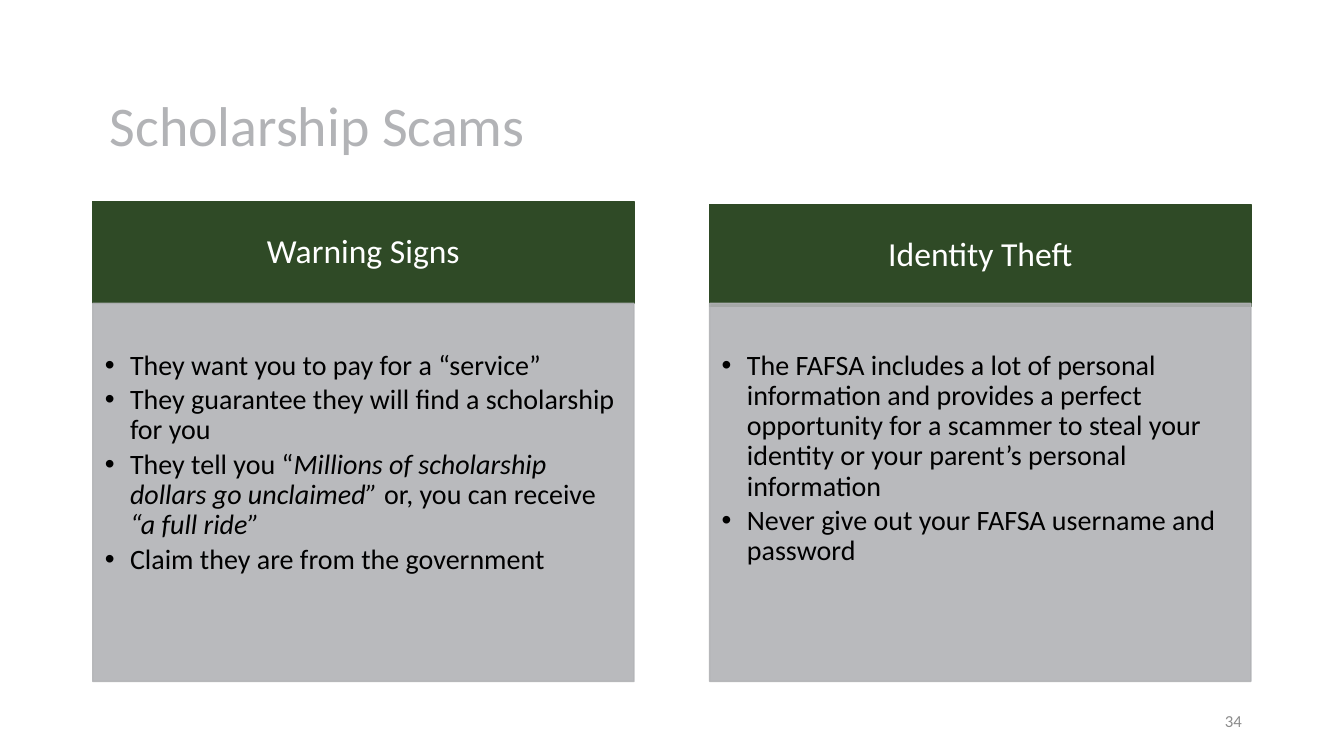
from pptx import Presentation
from pptx.dml.color import RGBColor
from pptx.enum.shapes import MSO_SHAPE
from pptx.enum.text import MSO_ANCHOR, PP_ALIGN
from pptx.oxml.ns import qn
from pptx.util import Pt
from lxml.etree import SubElement

TITLE = "Scholarship Scams"
PAGE_NUMBER = "34"
PANELS = [
    {
        "heading": "Warning Signs",
        "heading_top": 144,
        "points": [
            [("They want you to pay for a “service”", False)],
            [("They guarantee they will find a scholarship for you", False)],
            [
                ("They tell you “", False),
                ("Millions of scholarship dollars go unclaimed” ", True),
                ("or, you can receive ", False),
                ("“a full ride”", True),
            ],
            [("Claim they are from the government", False)],
        ],
    },
    {
        "heading": "Identity Theft",
        "heading_top": 146.16,
        "points": [
            [("The FAFSA includes a lot of personal information and provides "
              "a perfect opportunity for a scammer to steal your identity "
              "or your parent’s personal information", False)],
            [("Never give out your FAFSA username and password", False)],
        ],
    },
]
COLORS = {
    "green": "2F4A26",
    "gray": "B2B3B6",
    "page": "8C8C8C",
    "white": "FFFFFF",
    "black": "000000",
}
FONT = "Calibri"
PANEL_LEFT, PANEL_STEP, PANEL_WIDTH = 66.24, 440.64, 386.64
HEADING_HEIGHT = 72.72
BODY_TOP, BODY_HEIGHT = 216.72, 270
BULLET_INDENT = 18


def rgb(color):
    return RGBColor.from_string(COLORS[color])


def write_text(holder, paragraphs, *, size, color, align=PP_ALIGN.LEFT,
               anchor=MSO_ANCHOR.TOP, insets=(7.2, 3.6, 7.2, 3.6),
               line_spacing=0.9, space_after=0, bullets=False):
    frame = holder.text_frame
    frame.word_wrap = True
    frame.vertical_anchor = anchor
    (frame.margin_left, frame.margin_top,
     frame.margin_right, frame.margin_bottom) = map(Pt, insets)
    for index, runs in enumerate(paragraphs):
        paragraph = frame.add_paragraph() if index else frame.paragraphs[0]
        paragraph.alignment = align
        paragraph.line_spacing = line_spacing
        paragraph.space_after = Pt(space_after)
        if bullets:
            properties = paragraph._p.get_or_add_pPr()
            properties.set("marL", str(Pt(BULLET_INDENT)))
            properties.set("indent", str(-Pt(BULLET_INDENT)))
            SubElement(properties, qn("a:buFont"), typeface="Arial")
            SubElement(properties, qn("a:buChar"), char="•")
        for words, italic in runs:
            run = paragraph.add_run()
            run.text = words
            run.font.name = FONT
            run.font.size = Pt(size)
            run.font.italic = italic
            run.font.color.rgb = rgb(color)


def add_block(slide, left, top, height, color, opacity=100):
    block = slide.shapes.add_shape(
        MSO_SHAPE.RECTANGLE, Pt(left), Pt(top), Pt(PANEL_WIDTH), Pt(height))
    block.shadow.inherit = False
    block.fill.solid()
    block.fill.fore_color.rgb = rgb(color)
    block.line.color.rgb = rgb(color)
    block.line.width = Pt(1)
    if opacity < 100:
        for paint in block._element.spPr.iter(qn("a:srgbClr")):
            SubElement(paint, qn("a:alpha"), val=str(opacity * 1000))
    return block


def add_panel(slide, left, panel):
    heading = add_block(
        slide, left, panel["heading_top"], HEADING_HEIGHT, "green")
    write_text(heading, [[(panel["heading"], False)]], size=24, color="white",
               align=PP_ALIGN.CENTER, anchor=MSO_ANCHOR.MIDDLE,
               insets=(13.68, 7.92, 13.68, 7.92))
    body = add_block(slide, left, BODY_TOP, BODY_HEIGHT, "gray", opacity=90)
    write_text(body, panel["points"], size=20, color="black",
               insets=(8.64, 34, 11.52, 12.24), space_after=3, bullets=True)


def main():
    deck = Presentation()
    deck.slide_width, deck.slide_height = Pt(960), Pt(540)
    slide = deck.slides.add_slide(deck.slide_layouts[6])

    title = slide.shapes.add_textbox(Pt(71.28), Pt(54.72), Pt(786.24), Pt(61.92))
    write_text(title, [[(TITLE, False)]], size=40, color="gray",
               anchor=MSO_ANCHOR.BOTTOM)

    for column, panel in enumerate(PANELS):
        add_panel(slide, PANEL_LEFT + column * PANEL_STEP, panel)

    page = slide.shapes.add_textbox(Pt(678.24), Pt(500.4), Pt(216), Pt(28.8))
    write_text(page, [[(PAGE_NUMBER, False)]], size=12, color="page",
               align=PP_ALIGN.RIGHT, anchor=MSO_ANCHOR.MIDDLE, line_spacing=1.0)

    deck.save("out.pptx")


if __name__ == "__main__":
    main()
